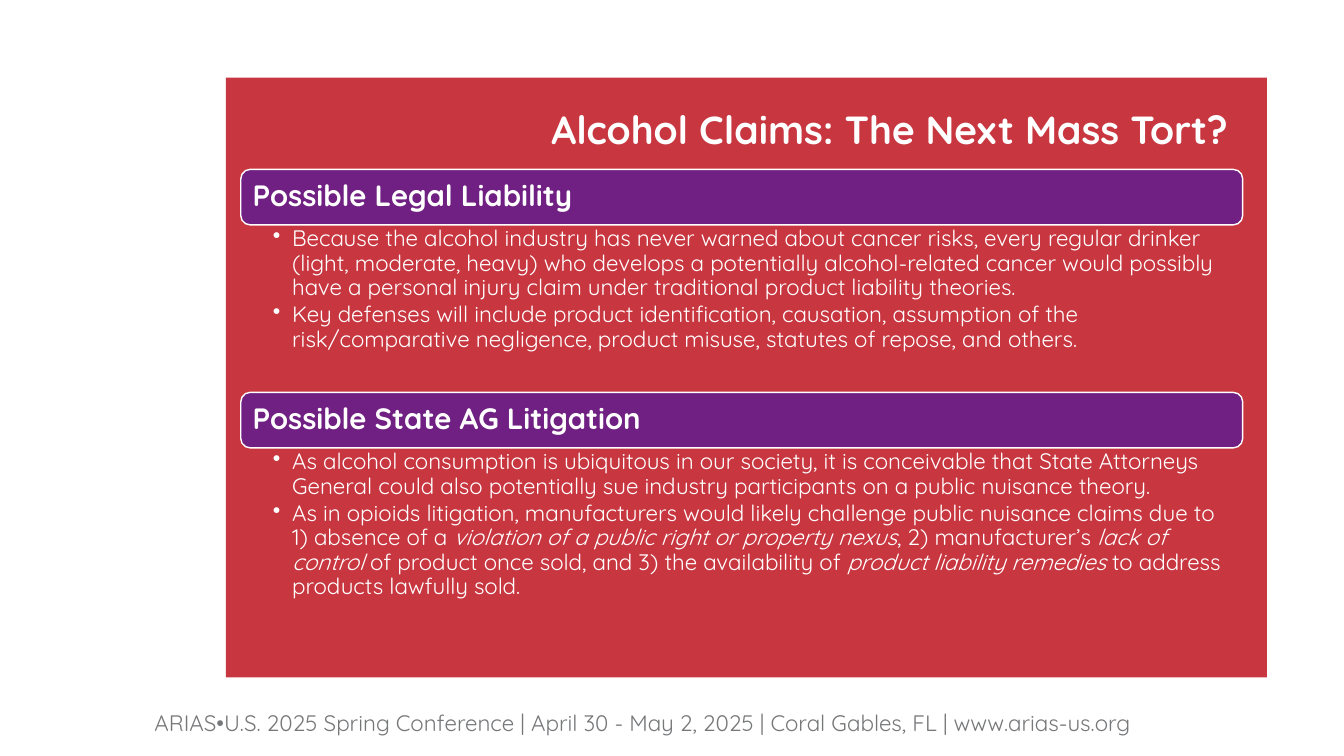
from dataclasses import dataclass

from lxml.etree import SubElement
from pptx import Presentation
from pptx.dml.color import RGBColor
from pptx.enum.shapes import MSO_SHAPE
from pptx.enum.text import MSO_ANCHOR, PP_ALIGN
from pptx.oxml.ns import qn
from pptx.util import Pt


@dataclass(frozen=True)
class Theme:
    font: str = "Quicksand"
    panel: str = "C83640"
    header: str = "702082"
    light: str = "FFFFFF"
    muted: str = "767779"
    title_size: int = 28
    header_size: int = 21
    body_size: int = 16


THEME = Theme()
LEFT, WIDTH = 172, 715.6
HEADER_HEIGHT = 39.6
BULLET_INDENT = 13.7

# Each section: top, body height, heading, bullets; odd runs of a bullet are italic.
SECTIONS = [
    (121, 119.5, "Possible Legal Liability", [
        ["Because the alcohol industry has never warned about cancer risks, "
         "every regular drinker (light, moderate, heavy) who develops a "
         "potentially alcohol-related cancer would possibly have a personal "
         "injury claim under traditional product liability theories."],
        ["Key defenses will include product identification, causation, "
         "assumption of the risk/comparative negligence, product misuse, "
         "statutes of repose, and others."],
    ]),
    (280.3, 133.2, "Possible State AG Litigation", [
        ["As alcohol consumption is ubiquitous in our society, it is "
         "conceivable that State Attorneys General could also potentially sue "
         "industry participants on a public nuisance theory."],
        ["As in opioids litigation, manufacturers would likely challenge "
         "public nuisance claims due to 1) absence of a ",
         "violation of a public right or property nexus",
         ", 2) manufacturer’s ",
         "lack of control ",
         "of product once sold, and 3) the availability of ",
         "product liability remedies ",
         "to address products lawfully sold."],
    ]),
]


def add_box(s, shape_type, left, top, width, height, fill, line=None):
    sp = s.shapes.add_shape(shape_type, Pt(left), Pt(top), Pt(width), Pt(height))
    sp.shadow.inherit = False
    sp.fill.solid()
    sp.fill.fore_color.rgb = RGBColor.from_string(fill)
    if line:
        sp.line.color.rgb = RGBColor.from_string(line)
        sp.line.width = Pt(1)
    else:
        sp.line.fill.background()
    return sp


def add_text_box(s, left, top, width, height):
    return s.shapes.add_textbox(Pt(left), Pt(top), Pt(width), Pt(height))


def set_frame(sp, anchor, insets):
    """Set wrapping, anchor and the left, top, right and bottom insets."""
    tf = sp.text_frame
    tf.word_wrap = True
    tf.vertical_anchor = anchor
    tf.margin_left, tf.margin_top, tf.margin_right, tf.margin_bottom = map(Pt, insets)
    return tf


def write(p, text, *, size, color=THEME.light, bold=False, italic=False,
          align=PP_ALIGN.LEFT):
    p.alignment = align
    r = p.add_run()
    r.text = text
    r.font.name = THEME.font
    r.font.size = Pt(size)
    r.font.bold = bold
    r.font.italic = italic
    r.font.color.rgb = RGBColor.from_string(color)


def set_bullet(p):
    p.level = 1
    pPr = p._p.get_or_add_pPr()
    pPr.set("marL", str(Pt(BULLET_INDENT)))
    pPr.set("indent", str(-Pt(BULLET_INDENT)))
    SubElement(pPr, qn("a:buChar"), char="•")
    p.line_spacing = 0.9
    p.space_after = Pt(2.5)


def add_title(s, text):
    sp = add_text_box(s, 386.6, -36.7, 494, 149)
    tf = set_frame(sp, MSO_ANCHOR.BOTTOM, [3.6] * 4)
    write(tf.paragraphs[0], text, size=THEME.title_size, bold=True,
          align=PP_ALIGN.RIGHT)


def add_footer(s, text):
    sp = add_text_box(s, 44, 502.6, 830, 27.4)
    tf = set_frame(sp, MSO_ANCHOR.MIDDLE, [3.6] * 4)
    write(tf.paragraphs[0], text, size=THEME.body_size, color=THEME.muted,
          align=PP_ALIGN.CENTER)


def add_section(s, top, body_height, heading, bullets):
    sp = add_box(s, MSO_SHAPE.ROUNDED_RECTANGLE, LEFT, top, WIDTH, HEADER_HEIGHT,
                 THEME.header, THEME.light)
    tf = set_frame(sp, MSO_ANCHOR.MIDDLE, [6.5] * 4)
    p = tf.paragraphs[0]
    p.line_spacing = 0.9
    write(p, heading, size=THEME.header_size, bold=True)

    sp = add_text_box(s, LEFT, top + HEADER_HEIGHT, WIDTH, body_height)
    tf = set_frame(sp, MSO_ANCHOR.TOP, [23, 2, 11.5, 2])
    for i, runs in enumerate(bullets):
        p = tf.add_paragraph() if i else tf.paragraphs[0]
        set_bullet(p)
        for j, text in enumerate(runs):
            write(p, text, size=THEME.body_size, italic=j % 2 == 1)


def main():
    prs = Presentation()
    prs.slide_width, prs.slide_height = Pt(960), Pt(540)
    s = prs.slides.add_slide(prs.slide_layouts[6])
    add_box(s, MSO_SHAPE.RECTANGLE, 161.3, 55.5, 743.7, 428.4, THEME.panel)
    add_footer(s, "ARIAS•U.S. 2025 Spring Conference | April 30 - May 2, 2025 | "
                  "Coral Gables, FL | www.arias-us.org")
    add_title(s, "Alcohol Claims: The Next Mass Tort?")
    for section in SECTIONS:
        add_section(s, *section)
    prs.save("out.pptx")


if __name__ == "__main__":
    main()
